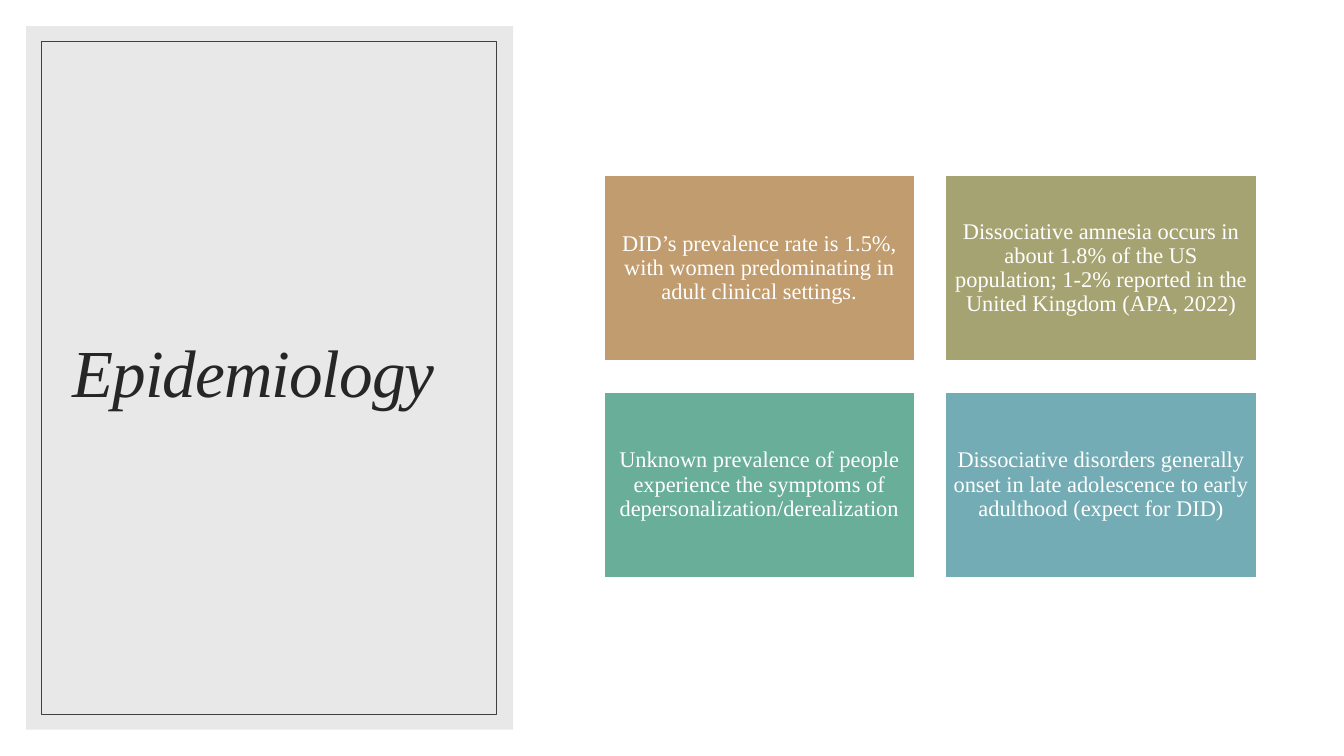
"""Build the Epidemiology slide: a framed title panel beside a grid of four facts."""
from dataclasses import dataclass

from lxml import etree
from pptx import Presentation
from pptx.dml.color import RGBColor
from pptx.enum.shapes import MSO_SHAPE
from pptx.enum.text import MSO_ANCHOR, PP_ALIGN
from pptx.oxml.ns import qn
from pptx.util import Inches, Pt

RECTANGLE = MSO_SHAPE.RECTANGLE
MIDDLE = MSO_ANCHOR.MIDDLE
CENTER = PP_ALIGN.CENTER


@dataclass(frozen=True)
class Theme:
    font: str = "Times New Roman"
    white: str = "FFFFFF"
    panel: str = "D9D9D9"
    frame: str = "404040"
    title: str = "262626"
    title_size: int = 48
    fact_size: int = 16


theme = Theme()


def add_rectangle(page, left, top, width, height, fill=None, line=None, weight=1):
    box = page.shapes.add_shape(
        RECTANGLE, Inches(left), Inches(top), Inches(width), Inches(height))
    box.shadow.inherit = False
    if fill:
        box.fill.solid()
        box.fill.fore_color.rgb = RGBColor.from_string(fill)
    else:
        box.fill.background()
    if line:
        box.line.color.rgb = RGBColor.from_string(line)
        box.line.width = Pt(weight)
    else:
        box.line.fill.background()
    return box


def write_text(box, text, size, color, inset):
    frame = box.text_frame
    frame.word_wrap = True
    frame.vertical_anchor = MIDDLE
    frame.margin_left = frame.margin_right = Inches(inset)
    frame.margin_top = frame.margin_bottom = Inches(inset)
    para = frame.paragraphs[0]
    para.alignment = CENTER
    para.line_spacing = 0.9
    span = para.add_run()
    span.text = text
    span.font.name = theme.font
    span.font.size = Pt(size)
    span.font.color.rgb = RGBColor.from_string(color)
    return span


deck = Presentation()
deck.slide_width = Inches(13.33)
deck.slide_height = Inches(7.5)
page = deck.slides.add_slide(deck.slide_layouts[6])
page.background.fill.solid()
page.background.fill.fore_color.rgb = RGBColor.from_string(theme.white)

panel = add_rectangle(page, 0.26, 0.26, 4.83, 6.98, fill=theme.panel)
panel_color = panel._element.spPr.find(qn("a:solidFill")).find(qn("a:srgbClr"))
etree.SubElement(panel_color, qn("a:alpha")).set("val", "60000")

title = page.shapes.add_textbox(Inches(0.63), Inches(0.61), Inches(4.12), Inches(6.24))
title_span = write_text(title, "Epidemiology", theme.title_size, theme.title, 0)
title.text_frame.margin_right = Inches(0.35)
title_span.font.italic = True
title_span.font._element.set("spc", "-70")

add_rectangle(page, 0.41, 0.41, 4.51, 6.68, line=theme.frame, weight=0.5)

facts = [
    ("C09C6E", "DID’s prevalence rate is 1.5%, with women predominating in "
               "adult clinical settings."),
    ("A5A372", "Dissociative amnesia occurs in about 1.8% of the US population; "
               "1-2% reported in the United Kingdom (APA, 2022)"),
    ("68AE99", "Unknown prevalence of people experience the symptoms of "
               "depersonalization/derealization"),
    ("73ACB4", "Dissociative disorders generally onset in late adolescence to "
               "early adulthood (expect for DID)"),
]
grid_left, grid_top = 5.99, 1.74
card_width, card_height, gap = 3.08, 1.84, 0.31
for index, (color, text) in enumerate(facts):
    row, column = divmod(index, 2)
    card = add_rectangle(
        page,
        grid_left + column * (card_width + gap),
        grid_top + row * (card_height + gap),
        card_width, card_height, fill=color, line=theme.white)
    write_text(card, text, theme.fact_size, theme.white, 0.07)

deck.save("out.pptx")
